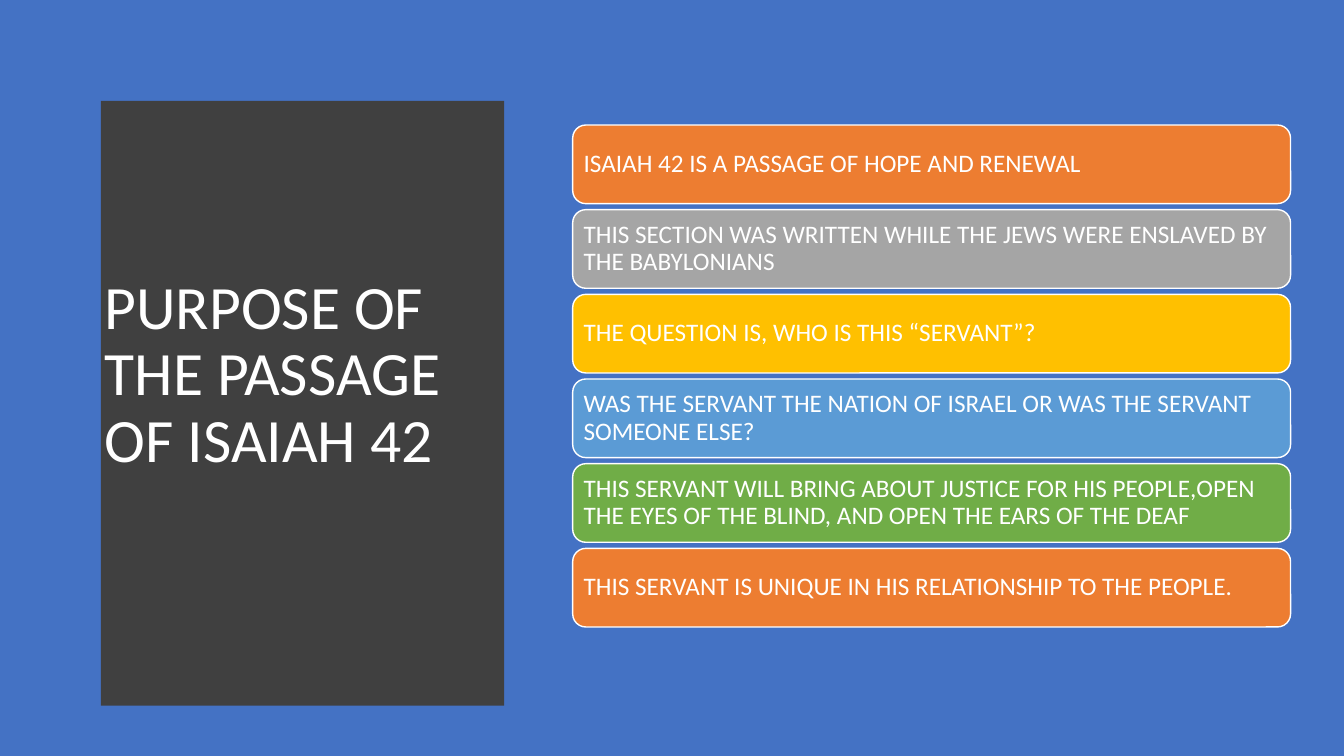
from pptx import Presentation
from pptx import util as u
from pptx.dml.color import RGBColor
from pptx.enum import shapes, text

FONT = "Calibri"
WHITE = "FFFFFF"
POINTS = [
    ("ED7D31", "ISAIAH 42 IS A PASSAGE OF HOPE AND RENEWAL"),
    ("A5A5A5", "THIS SECTION WAS WRITTEN WHILE THE JEWS WERE ENSLAVED BY THE BABYLONIANS"),
    ("FFC000", "THE QUESTION IS, WHO IS THIS “SERVANT”?"),
    ("5B9BD5", "WAS THE SERVANT THE NATION OF ISRAEL OR WAS THE SERVANT SOMEONE ELSE?"),
    ("70AD47", "THIS SERVANT WILL BRING ABOUT JUSTICE FOR HIS PEOPLE,"
               "OPEN THE EYES OF THE BLIND, AND OPEN THE EARS OF THE DEAF"),
    ("ED7D31", "THIS SERVANT IS UNIQUE IN HIS RELATIONSHIP TO THE PEOPLE."),
]


def paint(fill, color):
    fill.solid()
    fill.fore_color.rgb = RGBColor.from_string(color)


def write(shape, words, size):
    frame = shape.text_frame
    frame.word_wrap = True
    frame.vertical_anchor = text.MSO_ANCHOR.MIDDLE
    para = frame.paragraphs[0]
    para.alignment = text.PP_ALIGN.LEFT
    para.line_spacing = 0.9
    run = para.add_run()
    run.text = words
    run.font.name = FONT
    run.font.size = u.Pt(size)
    run.font.color.rgb = RGBColor.from_string(WHITE)
    return frame


def add_panel(slide, left, top, width, height):
    """Dark title panel whose right edge bows outward."""
    bulge, steps = 0.24, 40
    edge = left + width - bulge
    curve = []
    for i in range(steps + 1):
        t = i / steps
        curve.append((edge + 4 * bulge * t * (1 - t), top + height * t))
    pen = slide.shapes.build_freeform(left, top, scale=u.Inches(1))
    pen.add_line_segments(curve + [(left, top + height)], close=True)
    panel = pen.convert_to_shape()
    panel.shadow.inherit = False
    paint(panel.fill, "404040")
    panel.line.fill.background()

    # Title
    title = slide.shapes.add_textbox(
        u.Inches(left + 0.41), u.Inches(top + 0.59),
        u.Inches(width - 1.05), u.Inches(height - 1.2))
    write(title, "PURPOSE OF THE PASSAGE OF ISAIAH 42", 44)


def add_cards(slide, left, top, width, height):
    """Stack of equal rounded cards, one for each point."""
    gap = 0.06
    tall = (height - gap * (len(POINTS) - 1)) / len(POINTS)
    for i, (color, words) in enumerate(POINTS):
        card = slide.shapes.add_shape(
            shapes.MSO_SHAPE.ROUNDED_RECTANGLE,
            u.Inches(left), u.Inches(top + i * (tall + gap)),
            u.Inches(width), u.Inches(tall))
        card.shadow.inherit = False
        paint(card.fill, color)
        paint(card.line.fill, WHITE)
        card.line.width = u.Pt(1)
        frame = write(card, words, 18)
        frame.margin_left = frame.margin_right = u.Inches(0.07)
        frame.margin_top = frame.margin_bottom = u.Inches(0.07)


def main():
    deck = Presentation()
    deck.slide_width, deck.slide_height = u.Inches(13.33), u.Inches(7.5)
    slide = deck.slides.add_slide(deck.slide_layouts[6])
    paint(slide.background.fill, "4472C4")
    add_panel(slide, 0.53, 0.52, 4.79, 6.44)
    add_cards(slide, 5.68, 1.24, 7.12, 4.98)
    deck.save("out.pptx")


if __name__ == "__main__":
    main()
